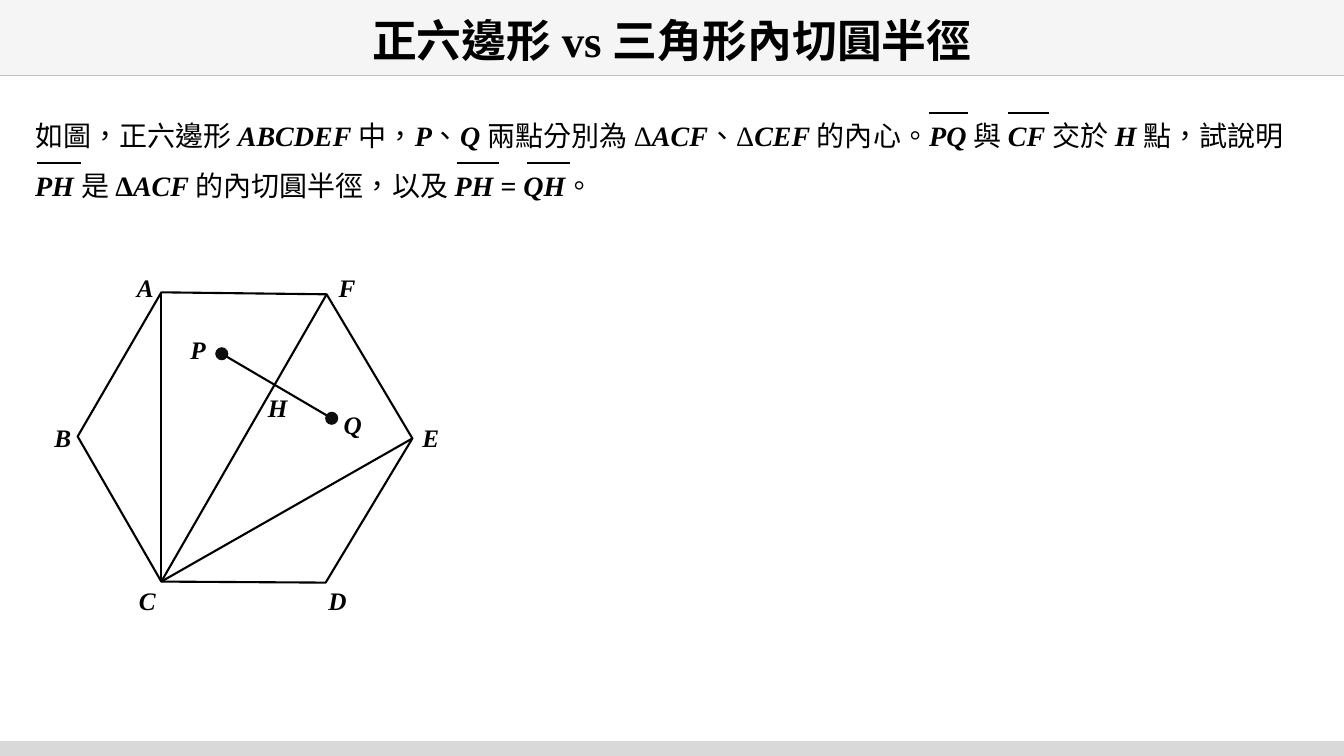
from lxml.etree import SubElement
from pptx import Presentation
from pptx.dml.color import RGBColor
from pptx.enum.lang import MSO_LANGUAGE_ID as LANGUAGE
from pptx.enum.shapes import MSO_CONNECTOR, MSO_SHAPE as SHAPE
from pptx.enum.text import MSO_ANCHOR as ANCHOR, MSO_AUTO_SIZE as FIT, PP_ALIGN as ALIGN
from pptx.oxml.ns import qn
from pptx.util import Inches, Pt

COLORS = {"ink": "000000", "dot": "0D0D0D", "band": "F5F5F5",
          "rule": "BFBFBF", "footer": "D9D9D9"}

prs = Presentation()
prs.slide_width, prs.slide_height = Inches(13.33), Inches(7.5)
slide = prs.slides.add_slide(prs.slide_layouts[6])
shapes = slide.shapes


def write(frame, runs, size=18, align=ALIGN.LEFT, spacing=1.0):
    frame.word_wrap = True
    paragraph = frame.paragraphs[0]
    paragraph.alignment = align
    paragraph.line_spacing = spacing
    for text, style in runs:
        run = paragraph.add_run()
        run.text = text
        run.font.name = "Times New Roman"
        run.font.language_id = LANGUAGE.TRADITIONAL_CHINESE
        run.font.size = Pt(size)
        run.font.bold = "b" in style
        run.font.italic = "i" in style
        run.font.color.rgb = RGBColor.from_string(COLORS["ink"])


def draw_line(start, end, color="ink", width=1.5):
    line = shapes.add_connector(MSO_CONNECTOR.STRAIGHT,
                                *(Inches(v) for v in (*start, *end)))
    line.line.color.rgb = RGBColor.from_string(COLORS[color])
    line.line.width = Pt(width)
    SubElement(line._element.spPr, qn("a:effectLst"))


footer = shapes.add_shape(SHAPE.RECTANGLE, 0, Inches(7.36), Inches(13.33), Inches(0.14))
title = shapes.add_shape(SHAPE.RECTANGLE, 0, 0, Inches(13.33), Inches(0.74))
for bar, color in ((footer, "footer"), (title, "band")):
    bar.shadow.inherit = False
    bar.fill.solid()
    bar.fill.fore_color.rgb = RGBColor.from_string(COLORS[color])
footer.line.color.rgb = RGBColor.from_string(COLORS["footer"])
footer.line.width = Pt(1)
title.line.fill.background()
draw_line((0, 0.75), (13.33, 0.75), "rule", 0.5)

title.text_frame.vertical_anchor = ANCHOR.MIDDLE
title.text_frame.margin_top = Inches(0.12)
title.text_frame.margin_bottom = 0
write(title.text_frame, [("正六邊形 vs 三角形內切圓半徑", "b")],
      size=32, align=ALIGN.CENTER, spacing=0.9)

problem = shapes.add_textbox(Inches(0.25), Inches(0.96), Inches(12.87), Inches(1.05))
problem.text_frame.auto_size = FIT.SHAPE_TO_FIT_TEXT
write(problem.text_frame, [
    ("如圖，正六邊形 ", ""), ("ABCDEF", "bi"), (" 中，", ""), ("P", "bi"),
    ("、", ""), ("Q", "bi"), (" 兩點分別為 Δ", ""), ("ACF", "bi"),
    ("、Δ", ""), ("CEF ", "bi"), ("的內心。", ""), ("PQ", "bi"),
    (" 與 ", ""), ("CF", "bi"), (" 交於 ", ""), ("H", "bi"),
    (" 點，試說明 ", ""), ("PH", "bi"), (" 是 ", ""), ("Δ", "b"),
    ("ACF ", "bi"), ("的內切圓半徑，以及 ", ""), ("PH = QH", "bi"), ("。", ""),
], size=20, spacing=1.5)

points = {"A": (1.6, 2.9), "F": (3.24, 2.92), "E": (4.09, 4.35),
          "D": (3.23, 5.78), "C": (1.6, 5.77), "B": (0.77, 4.33),
          "P": (2.2, 3.51), "Q": (3.29, 4.15)}

corners = [(Inches(x), Inches(y)) for x, y in (points[name] for name in "AFEDCB")]
outline = shapes.build_freeform(*corners[0])
outline.add_line_segments(corners[1:], close=True)
hexagon = outline.convert_to_shape()
hexagon.shadow.inherit = False
hexagon.fill.background()
hexagon.line.color.rgb = RGBColor.from_string(COLORS["ink"])
hexagon.line.width = Pt(1.5)

for start, end in ("CF", "CA", "CE", "PQ"):
    draw_line(points[start], points[end])

dot_size = 0.13
for name in "PQ":
    x, y = points[name]
    dot = shapes.add_shape(SHAPE.OVAL, Inches(x - dot_size / 2), Inches(y - dot_size / 2),
                           Inches(dot_size), Inches(dot_size))
    dot.shadow.inherit = False
    dot.fill.solid()
    dot.fill.fore_color.rgb = RGBColor.from_string(COLORS["dot"])
    dot.line.fill.background()

label_corners = {"A": (1.26, 2.65), "B": (0.44, 4.14), "C": (1.28, 5.76),
                 "D": (3.16, 5.76), "E": (4.09, 4.14), "F": (3.26, 2.65),
                 "P": (1.79, 3.27), "Q": (3.31, 4.01), "H": (2.56, 3.84)}
for name, (left, top) in label_corners.items():
    label = shapes.add_textbox(Inches(left), Inches(top), Inches(0.4), Inches(0.4))
    label.text_frame.auto_size = FIT.SHAPE_TO_FIT_TEXT
    write(label.text_frame, [(name, "bi")])

for left, right, y in ((9.21, 9.6, 1.12), (10, 10.4, 1.12), (0.37, 0.8, 1.62),
                       (4.53, 4.95, 1.62), (5.23, 5.65, 1.62)):
    draw_line((left, y), (right, y))

prs.save("out.pptx")
